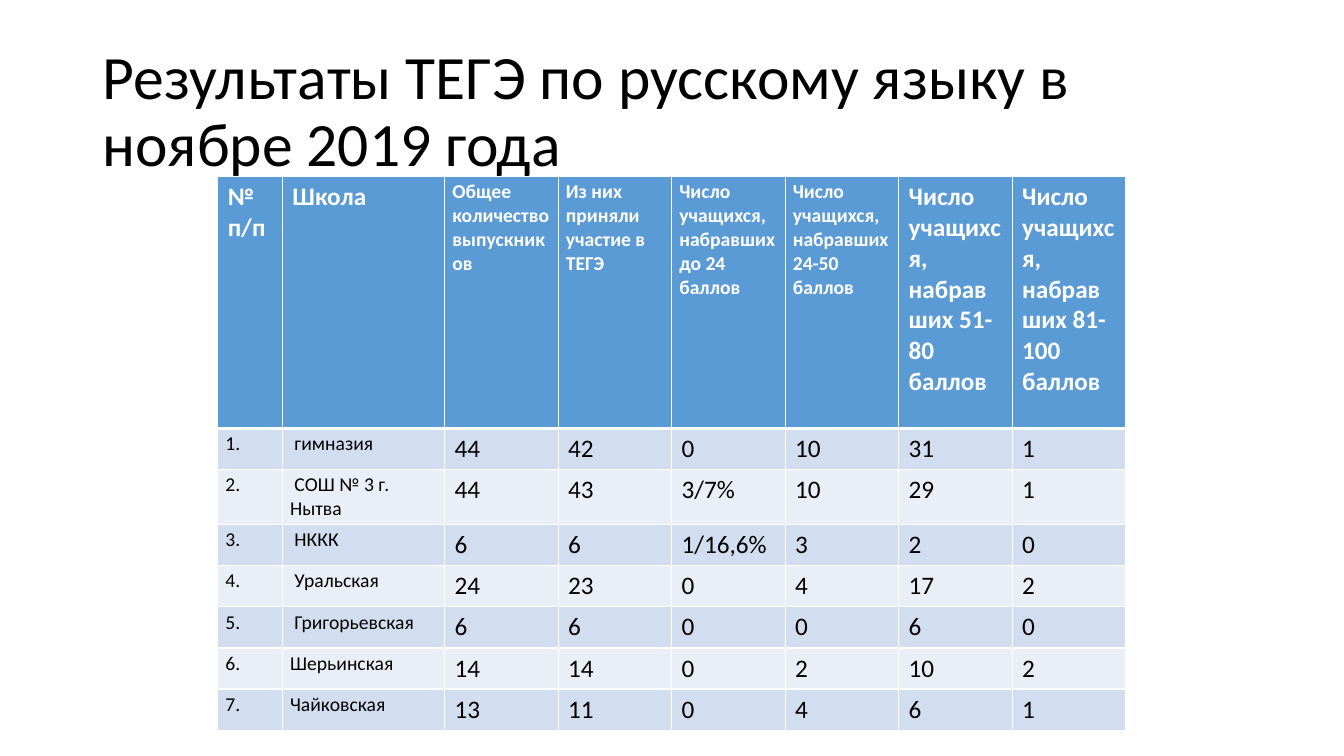
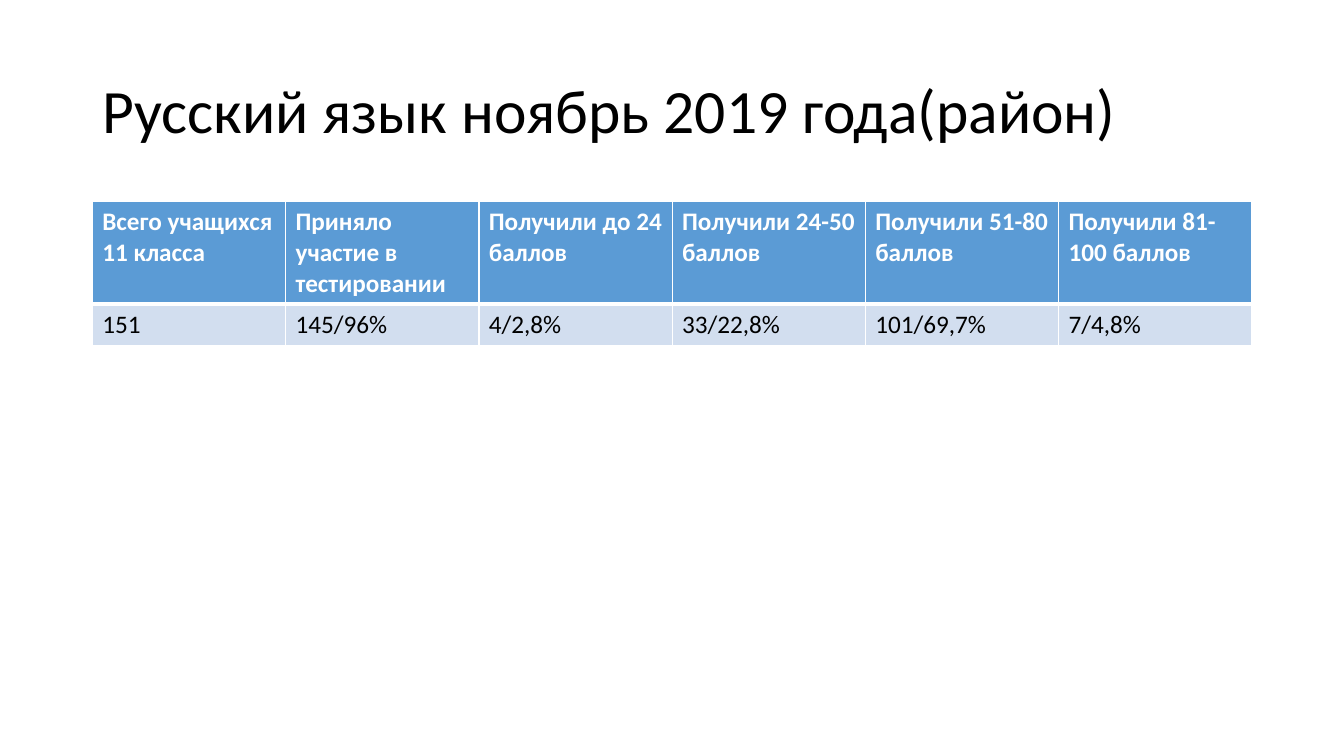
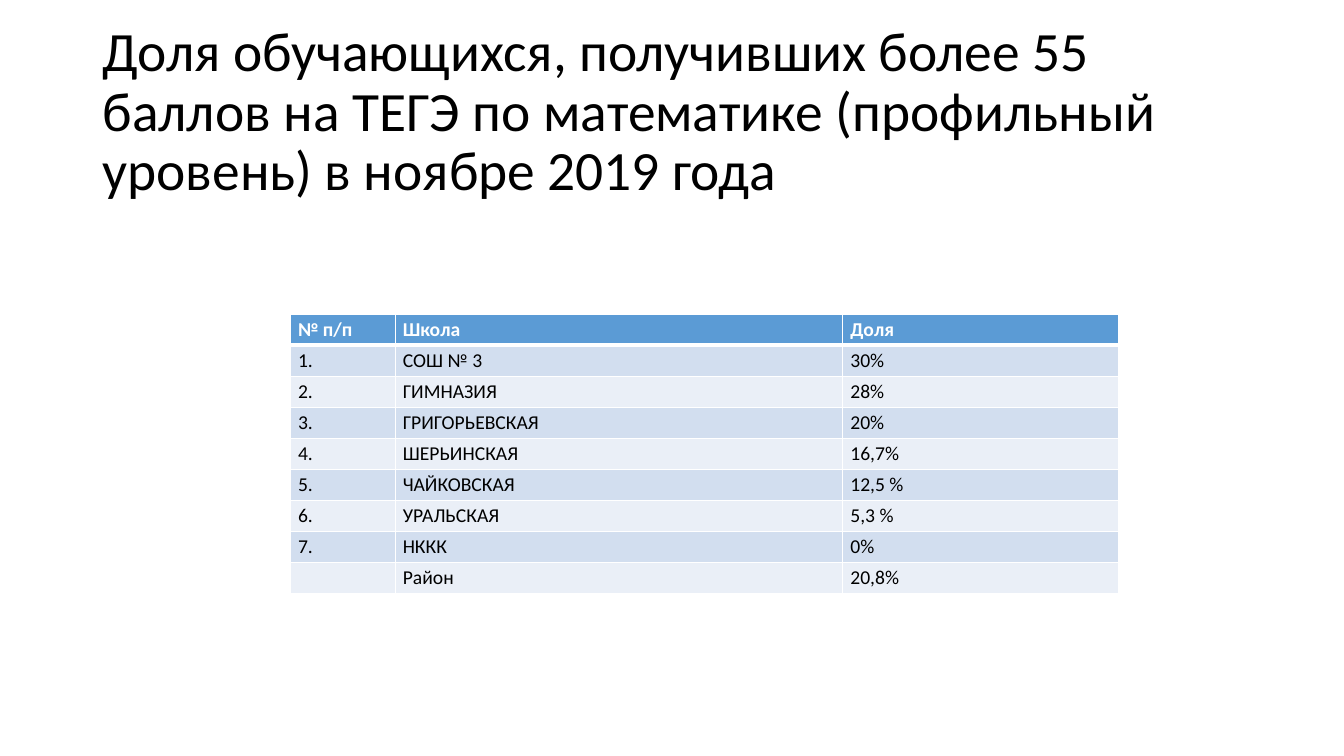
from lxml import etree
from pptx import Presentation
from pptx.dml.color import RGBColor
from pptx.enum.text import MSO_ANCHOR as Anchor, MSO_AUTO_SIZE as Fit, PP_ALIGN as Align
from pptx.oxml.ns import qn
from pptx.util import Cm, Pt

BLACK = RGBColor(0x00, 0x00, 0x00)
WHITE = RGBColor(0xFF, 0xFF, 0xFF)
BLUE = RGBColor(0x5B, 0x9B, 0xD5)
BANDS = [RGBColor(0xD2, 0xDE, 0xEF), RGBColor(0xEA, 0xEF, 0xF7)]
FONT = "Calibri"
PADS = {14: (0.19, 0.09), 18: (0.25, 0.13)}

SCORES = [
    ["№ п/п", "Школа", "Общее количество выпускников", "Из них приняли участие в ТЕГЭ",
     "Число учащихся, набравших до 24 баллов", "Число учащихся, набравших 24-50 баллов",
     "Число учащихся, набравших 51-80 баллов", "Число учащихся, набравших 81-100 баллов"],
    ["1.", " гимназия", "44", "42", "0", "10", "31", "1"],
    ["2.", " СОШ № 3 г. Нытва", "44", "43", "3/7%", "10", "29", "1"],
    ["3.", " НККК", "6", "6", "1/16,6%", "3", "2", "0"],
    ["4.", " Уральская", "24", "23", "0", "4", "17", "2"],
    ["5.", " Григорьевская", "6", "6", "0", "0", "6", "0"],
    ["6.", "Шерьинская", "14", "14", "0", "2", "10", "2"],
    ["7.", "Чайковская", "13", "11", "0", "4", "6", "1"],
]
TOTALS = [
    ["Всего учащихся 11 класса", "Приняло участие в тестировании", "Получили до 24 баллов",
     "Получили 24-50 баллов", "Получили 51-80 баллов", "Получили 81-100 баллов"],
    ["151", "145/96%", "4/2,8%", "33/22,8%", "101/69,7%", "7/4,8%"],
]
SHARES = [
    ["№ п/п", "Школа", "Доля"],
    ["1.", "СОШ № 3", "30%"],
    ["2.", "ГИМНАЗИЯ", "28%"],
    ["3.", "ГРИГОРЬЕВСКАЯ", "20%"],
    ["4.", "ШЕРЬИНСКАЯ", "16,7%"],
    ["5.", "ЧАЙКОВСКАЯ", "12,5 %"],
    ["6.", "УРАЛЬСКАЯ", "5,3 %"],
    ["7.", "НККК", "0%"],
    ["", "Район", "20,8%"],
]


class Deck:
    """Holds the shared style and the current slide."""

    def __init__(self):
        self.prs = Presentation()
        self.prs.slide_width, self.prs.slide_height = Cm(33.87), Cm(19.05)
        self.slide = None

    def style(self, para, size, color, bold=False):
        """Format every run of a paragraph."""
        for run in para.runs:
            font = run.font
            font.name, font.size, font.bold = FONT, Pt(size), bold
            font.color.rgb = color

    def title(self, text, size=44):
        """Start a slide with its title."""
        self.slide = self.prs.slides.add_slide(self.prs.slide_layouts[5])
        head = self.slide.shapes.title
        head.left, head.top, head.width, head.height = Cm(2.33), Cm(1.01), Cm(29.21), Cm(3.68)
        frame = head.text_frame
        frame.text = text
        frame.word_wrap, frame.auto_size = True, Fit.NONE
        frame.vertical_anchor = Anchor.MIDDLE
        para = frame.paragraphs[0]
        para.alignment, para.line_spacing = Align.LEFT, 0.9
        self.style(para, size, BLACK)

    def border(self, cell, top, bottom):
        """Draw white borders round a cell."""
        props = cell._tc.get_or_add_tcPr()
        for side, width in zip("LRTB", (1, 1, top, bottom)):
            line = etree.SubElement(props, qn(f"a:ln{side}"), w=str(Pt(width)))
            fill = etree.SubElement(line, qn("a:solidFill"))
            etree.SubElement(fill, qn("a:srgbClr"), val=str(WHITE))

    def cell(self, cell, text, size, row):
        """Fill and format one cell."""
        first = row == 0
        self.border(cell, 3 if row == 1 else 1, 3 if first else 1)
        cell.fill.solid()
        cell.fill.fore_color.rgb = BLUE if first else BANDS[(row - 1) % 2]
        side, edge = PADS[size]
        cell.margin_left = cell.margin_right = Cm(side)
        cell.margin_top = cell.margin_bottom = Cm(edge)
        cell.text_frame.text = text
        para = cell.text_frame.paragraphs[0]
        if text:
            self.style(para, size, WHITE if first else BLACK, first)
        else:
            etree.SubElement(para._p, qn("a:endParaRPr"), sz=str(size * 100))

    def table(self, left, top, data, cols, high, head, body):
        """Add a banded table with text sizes by column."""
        rows = [high[0]] + [high[1]] * (len(data) - 1)
        grid = self.slide.shapes.add_table(
            len(rows), len(cols), Cm(left), Cm(top), Cm(sum(cols)), Cm(sum(rows))).table
        for col, width in zip(grid.columns, cols):
            col.width = Cm(width)
        for row, height in zip(grid.rows, rows):
            row.height = Cm(height)
        for r, texts in enumerate(data):
            for c, text in enumerate(texts):
                self.cell(grid.cell(r, c), text, (body if r else head)[c], r)


def main():
    """Build the three slides."""
    deck = Deck()
    deck.title("Результаты ТЕГЭ по русскому языку в ноябре 2019 года")
    deck.table(5.49, 4.45, SCORES, [1.63, 4.09] + [2.86] * 6, (6.35, 1.03),
               [18] * 2 + [14] * 4 + [18] * 2, [14] * 2 + [18] * 6)
    deck.title("Русский язык ноябрь 2019 года(район)")
    deck.table(2.33, 5.08, TOTALS, [4.87] * 6, (1.03, 1.03), [18] * 6, [18] * 6)
    deck.title("Доля обучающихся, получивших более 55 баллов на ТЕГЭ по математике "
               "(профильный уровень) в ноябре 2019 года", 39.6)
    deck.table(7.32, 7.92, SHARES, [2.64, 11.28, 6.96], (0.78, 0.78), [14] * 3, [14] * 3)
    deck.prs.save("out.pptx")


if __name__ == "__main__":
    main()
